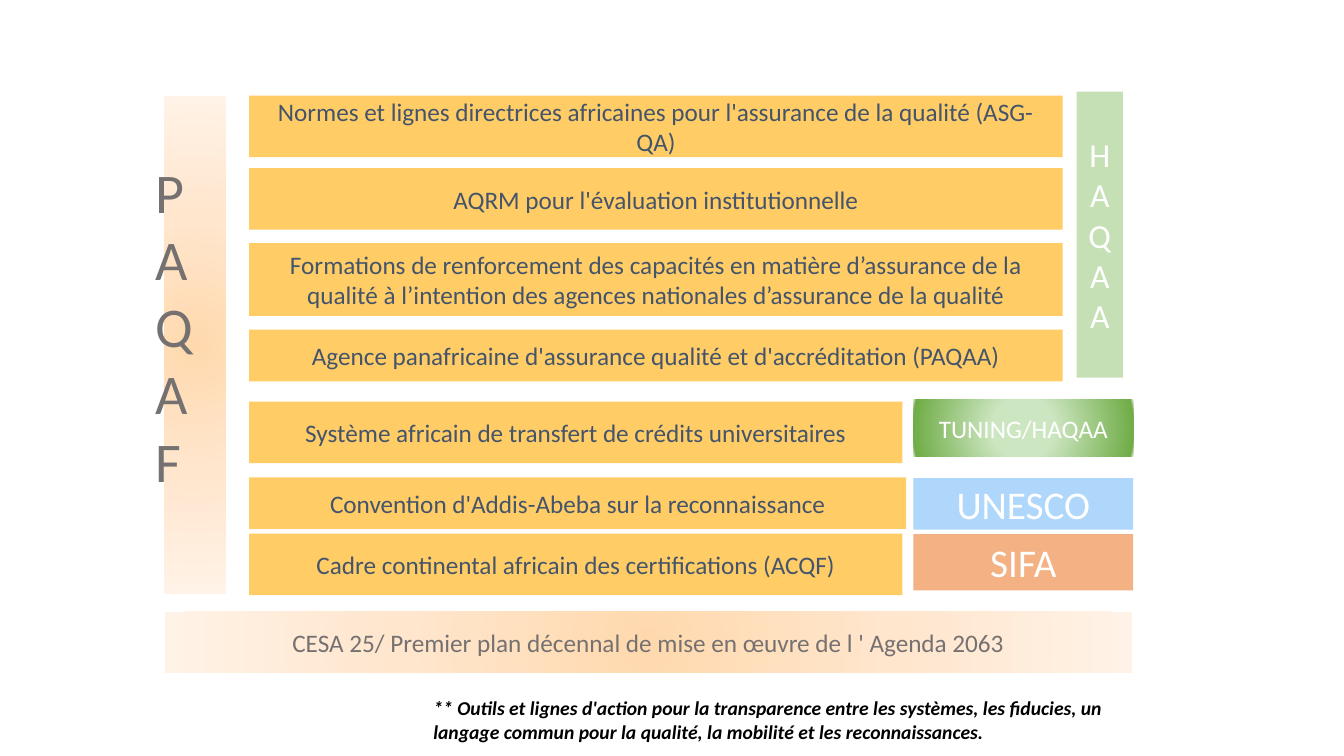
import dataclasses
import typing

import lxml.etree
import pptx
import pptx.dml.color
import pptx.enum.shapes
import pptx.enum.text
import pptx.oxml
import pptx.oxml.ns
import pptx.util

Cm = pptx.util.Cm
Stops = tuple[tuple[int, str], ...]

FONT = "Calibri"
AMBER, SLATE, GREY, WHITE = "FFCC66", "44546A", "767171", "FFFFFF"
PEACH_GLOW: Stops = ((0, "FFD9AE"), (50, "FFE6CD"), (100, "FFF2E6"))
GREEN_GLOW: Stops = ((27, "CDE6C2"), (97, "70AD47"), (100, "E6F2E1"))

TOOL_LEFT, PARTNER_LEFT, PARTNER_WIDTH = 6.28, 23.02, 5.54


@dataclasses.dataclass
class Block:
    """A filled rectangle with centred text; lengths in centimetres."""
    text: str
    left: float
    top: float
    width: float
    height: float
    fill: typing.Union[str, Stops] = AMBER
    color: str = SLATE
    size: int = 18
    margin: float = 0.4


@dataclasses.dataclass
class Label:
    """Free text without a background; lengths in centimetres."""
    text: str
    left: float
    top: float
    width: float
    height: float
    font: dict
    direction: str = "horz"


BLOCKS = [
    # Framework column
    Block("", 4.14, 2.41, 1.55, 12.55, PEACH_GLOW),
    # Tools
    Block("Normes et lignes directrices africaines pour l'assurance de la qualité (ASG-QA)",
          TOOL_LEFT, 2.41, 20.5, 1.55),
    Block("AQRM pour l'évaluation institutionnelle", TOOL_LEFT, 4.24, 20.5, 1.55),
    Block("Formations de renforcement des capacités en matière d’assurance de la qualité "
          "à l’intention des agences nationales d’assurance de la qualité",
          TOOL_LEFT, 6.13, 20.5, 1.83),
    Block("Agence panafricaine d'assurance qualité et d'accréditation (PAQAA)",
          TOOL_LEFT, 8.31, 20.5, 1.3),
    Block("Système africain de transfert de crédits universitaires",
          TOOL_LEFT, 10.12, 16.46, 1.55),
    Block("Convention d'Addis-Abeba sur la reconnaissance", TOOL_LEFT, 12.03, 16.56, 1.3),
    Block("Cadre continental africain des certifications (ACQF)",
          TOOL_LEFT, 13.45, 16.46, 1.55),
    # Partners
    Block("HAQAA", 27.13, 2.31, 1.17, 7.21, "C5E0B4", WHITE, 24, 0.25),
    Block("TUNING/HAQAA", PARTNER_LEFT, 10.08, PARTNER_WIDTH, 1.42, GREEN_GLOW, WHITE),
    Block("UNESCO", PARTNER_LEFT, 12.05, PARTNER_WIDTH, 1.3, "AFD7FB", WHITE, 28),
    Block("SIFA", PARTNER_LEFT, 13.46, PARTNER_WIDTH, 1.42, "F4B183", WHITE, 28),
    # Foundation
    Block("CESA 25/ Premier plan décennal de mise en œuvre de l ' Agenda 2063",
          4.15, 15.41, 24.38, 1.55, PEACH_GLOW, GREY),
]

LABELS = [
    Label("PAQAF", 3.66, 3.84, 2.54, 11.1, {"size": 40, "color": GREY}, "wordArtVert"),
    Label("** Outils et lignes d'action pour la transparence entre les systèmes, les fiducies, "
          "un langage commun pour la qualité, la mobilité et les reconnaissances.",
          10.67, 17.42, 18.42, 1.45,
          {"size": 14, "color": "000000", "bold": True, "italic": True}),
]


def set_color(target: typing.Any, color: str) -> None:
    target.rgb = pptx.dml.color.RGBColor.from_string(color)


def set_font(font: typing.Any, values: dict) -> None:
    for name, value in ({"name": FONT} | values).items():
        if name == "color":
            set_color(font.color, value)
        else:
            setattr(font, name, pptx.util.Pt(value) if name == "size" else value)


def set_glow(shape: typing.Any, stops: Stops) -> None:
    """Fill the shape with a gradient that spreads from its centre."""
    shape.fill.gradient()
    gradient = shape._element.spPr.find(pptx.oxml.ns.qn("a:gradFill"))
    for child in list(gradient):
        gradient.remove(child)
    stop_list = lxml.etree.SubElement(gradient, pptx.oxml.ns.qn("a:gsLst"))
    for position, color in stops:
        stop = lxml.etree.SubElement(stop_list, pptx.oxml.ns.qn("a:gs"), pos=str(position * 1000))
        lxml.etree.SubElement(stop, pptx.oxml.ns.qn("a:srgbClr"), val=color)
    spread = lxml.etree.SubElement(gradient, pptx.oxml.ns.qn("a:path"), path="circle")
    lxml.etree.SubElement(spread, pptx.oxml.ns.qn("a:fillToRect"),
                          dict.fromkeys("ltrb", "50000"))


def place(item: typing.Union[Block, Label]) -> list:
    return [Cm(length) for length in (item.left, item.top, item.width, item.height)]


def draw_block(page: typing.Any, block: Block) -> None:
    shape = page.shapes.add_shape(pptx.enum.shapes.MSO_SHAPE.RECTANGLE, *place(block))
    shape.shadow.inherit = False
    shape.line.fill.background()
    if isinstance(block.fill, str):
        shape.fill.solid()
        set_color(shape.fill.fore_color, block.fill)
    else:
        set_glow(shape, block.fill)
    if not block.text:
        return
    frame = shape.text_frame
    frame_format = {"word_wrap": True,
                    "vertical_anchor": pptx.enum.text.MSO_ANCHOR.MIDDLE,
                    "margin_left": Cm(block.margin), "margin_right": Cm(block.margin)}
    for name, value in frame_format.items():
        setattr(frame, name, value)
    para = frame.paragraphs[0]
    para.alignment = pptx.enum.text.PP_ALIGN.CENTER
    span = para.add_run()
    span.text = block.text
    set_font(span.font, {"size": block.size, "color": block.color})


def draw_label(page: typing.Any, label: Label) -> None:
    frame = page.shapes.add_textbox(*place(label)).text_frame
    frame.word_wrap = True
    frame._txBody.bodyPr.set("vert", label.direction)
    span = frame.paragraphs[0].add_run()
    span.text = label.text
    set_font(span.font, label.font)


def main() -> None:
    deck = pptx.Presentation()
    deck.slide_width, deck.slide_height = Cm(33.87), Cm(19.05)
    page = deck.slides.add_slide(deck.slide_layouts.get_by_name("Blank"))
    for block in BLOCKS:
        draw_block(page, block)
    for label in LABELS:
        draw_label(page, label)
    deck.save("out.pptx")


if __name__ == "__main__":
    main()
